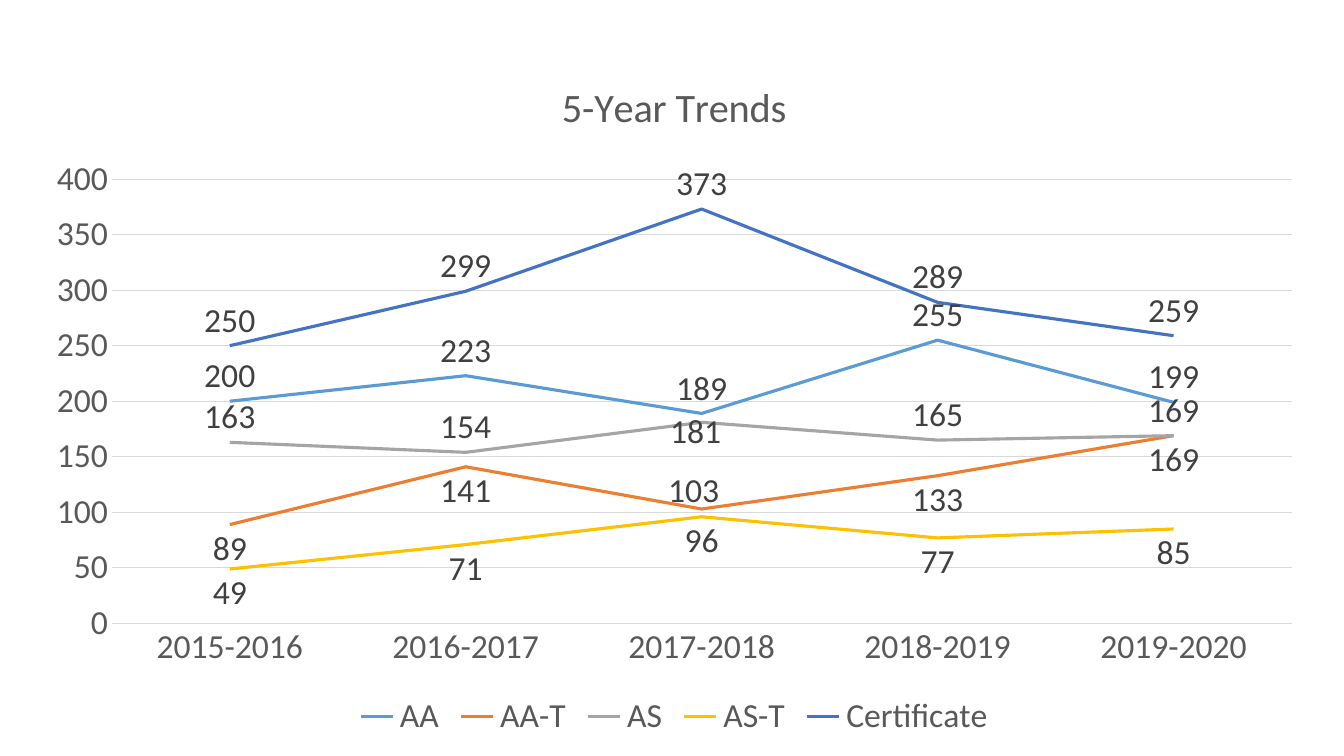
from lxml import etree
from pptx import Presentation
from pptx.chart.data import CategoryChartData
from pptx.dml.color import RGBColor
from pptx.enum.chart import (XL_CHART_TYPE as Type, XL_LABEL_POSITION as Pos,
                             XL_LEGEND_POSITION as LegendPos, XL_MARKER_STYLE as Marker,
                             XL_TICK_MARK as Tick)
from pptx.oxml.ns import qn
from pptx.util import Inches, Pt

TEXT = RGBColor(0x59, 0x59, 0x59)
LABEL = RGBColor(0x40, 0x40, 0x40)
GRID = RGBColor(0xD9, 0xD9, 0xD9)
BLUE = RGBColor(0x5B, 0x9B, 0xD5)
ORANGE = RGBColor(0xED, 0x7D, 0x31)
GRAY = RGBColor(0xA5, 0xA5, 0xA5)
GOLD = RGBColor(0xFF, 0xC0, 0x00)
NAVY = RGBColor(0x44, 0x72, 0xC4)

TITLE = "5-Year Trends"
YEARS = ["2015-2016", "2016-2017", "2017-2018", "2018-2019", "2019-2020"]
# name, values, colour, label position
AWARDS = [
    ("AA", (200, 223, 189, 255, 199), BLUE, Pos.ABOVE),
    ("AA-T", (89, 141, 103, 133, 169), ORANGE, Pos.BELOW),
    ("AS", (163, 154, 181, 165, 169), GRAY, Pos.ABOVE),
    ("AS-T", (49, 71, 96, 77, 85), GOLD, Pos.BELOW),
    ("Certificate", (250, 299, 373, 289, 259), NAVY, Pos.ABOVE),
]
# series name: point index, label position, shift in px (x, y)
MOVED_LABELS = {"AA-T": (2, Pos.ABOVE, -8, 7), "AS": (2, Pos.BELOW, -6, -14)}
LEFT, TOP, WIDTH, HEIGHT = 31, 53, 1286, 691


def px(n):
    return Inches(n / 100.8)


def set_font(font, color, size=24):
    font.name, font.size, font.bold = "Calibri", Pt(size), False
    font.color.rgb = color


def set_line(line, color, width):
    line.color.rgb, line.width = color, Pt(width)


def shift_label(series, index, dx, dy):
    for label in series._element.iter(qn("c:dLbl")):
        idx = label.find(qn("c:idx"))
        if idx.get("val") == str(index):
            layout = etree.Element(qn("c:layout"))
            manual = etree.SubElement(layout, qn("c:manualLayout"))
            for axis, share in (("x", dx / WIDTH), ("y", dy / HEIGHT)):
                etree.SubElement(manual, qn("c:" + axis)).set("val", f"{share:.4f}")
            idx.addnext(layout)


prs = Presentation()
prs.slide_width, prs.slide_height = Inches(13.33), Inches(7.5)
s = prs.slides.add_slide(prs.slide_layouts[6])

# Chart and title
data = CategoryChartData()
data.categories = YEARS
for name, values, _, _ in AWARDS:
    data.add_series(name, values)
chart = s.shapes.add_chart(Type.LINE, px(LEFT), px(TOP), px(WIDTH), px(HEIGHT), data).chart
set_font(chart.font, TEXT)
chart.has_title = True
p = chart.chart_title.text_frame.paragraphs[0]
p.text = TITLE
set_font(p.font, TEXT, 28.8)
chart.chart_title.include_in_layout = False

# Legend
chart.has_legend = True
chart.legend.position = LegendPos.BOTTOM
chart.legend.include_in_layout = False
set_font(chart.legend.font, TEXT)

# Axes
years, counts = chart.category_axis, chart.value_axis
for axis in (years, counts):
    axis.major_tick_mark = axis.minor_tick_mark = Tick.NONE
    set_font(axis.tick_labels.font, TEXT)
set_line(years.format.line, GRID, 0.75)
counts.minimum_scale, counts.maximum_scale, counts.major_unit = 0, 400, 50
counts.format.line.fill.background()
set_line(counts.major_gridlines.format.line, GRID, 0.75)

# Lines and value labels
for series, (name, _, color, position) in zip(chart.plots[0].series, AWARDS):
    series.smooth = False
    series.marker.style = Marker.NONE
    set_line(series.format.line, color, 2.25)
    labels = series.data_labels
    labels.show_value = True
    labels.position = position
    set_font(labels.font, LABEL)
    if name in MOVED_LABELS:
        index, side, dx, dy = MOVED_LABELS[name]
        label = series.points[index].data_label
        set_font(label.font, LABEL)
        label.position = side
        shift_label(series, index, dx, dy)

prs.save("out.pptx")
